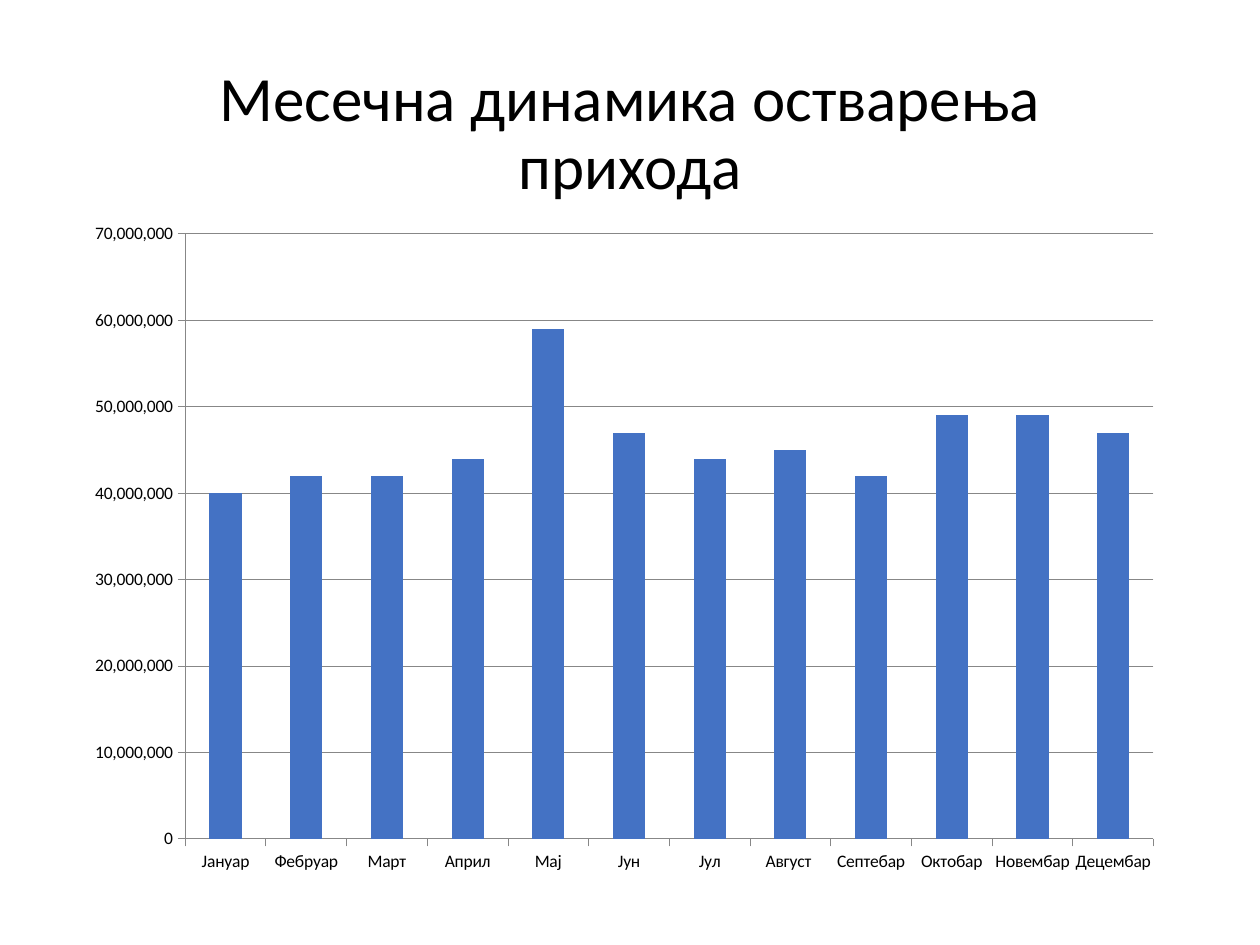
from pptx import Presentation
from pptx.chart.data import CategoryChartData
from pptx.dml.color import RGBColor
from pptx.enum.chart import XL_CHART_TYPE, XL_TICK_MARK
from pptx.enum.text import MSO_ANCHOR, MSO_AUTO_SIZE, PP_ALIGN
from pptx.util import Inches, Pt

COLUMNS = XL_CHART_TYPE.COLUMN_CLUSTERED
TICK_OUTSIDE, TICK_NONE = XL_TICK_MARK.OUTSIDE, XL_TICK_MARK.NONE
BOTTOM, CENTER = MSO_ANCHOR.BOTTOM, PP_ALIGN.CENTER
NO_AUTOFIT = MSO_AUTO_SIZE.NONE
TITLE_ONLY_LAYOUT = 5

FONT = "Calibri"
BLACK, BLUE, GRAY = "000000", "4472C4", "878787"

MONTHLY_REVENUE = {
    "Јануар": 40_000_000,
    "Фебруар": 42_000_000,
    "Март": 42_000_000,
    "Април": 44_000_000,
    "Мај": 59_000_000,
    "Јун": 47_000_000,
    "Јул": 44_000_000,
    "Август ": 45_000_000,
    "Септебар": 42_000_000,
    "Октобар": 49_000_000,
    "Новембар": 49_000_000,
    "Децембар": 47_000_000,
}


def color(hex_value):
    return RGBColor.from_string(hex_value)


def set_attributes(target, values):
    for name, value in values.items():
        setattr(target, name, value)


def set_font(font, size):
    set_attributes(font, {"name": FONT, "size": Pt(size), "bold": False})
    font.color.rgb = color(BLACK)


def set_line(line):
    line.width = Pt(0.5)
    line.color.rgb = color(GRAY)


def add_title(slide, text):
    title = slide.shapes.title
    set_attributes(title, {
        "left": Inches(1.25), "top": Inches(0.4),
        "width": Inches(7.5), "height": Inches(1.26),
    })
    frame = title.text_frame
    frame.text = text
    set_attributes(frame, {
        "word_wrap": True, "auto_size": NO_AUTOFIT, "vertical_anchor": BOTTOM,
    })
    paragraph = frame.paragraphs[0]
    set_attributes(paragraph, {"alignment": CENTER, "line_spacing": 0.9})
    set_font(paragraph.runs[0].font, 36)


def format_axis(axis, number_format):
    set_attributes(axis, {
        "major_tick_mark": TICK_OUTSIDE, "minor_tick_mark": TICK_NONE,
    })
    set_attributes(axis.tick_labels, {
        "number_format": number_format, "number_format_is_linked": False,
    })
    set_line(axis.format.line)


def add_revenue_chart(slide):
    data = CategoryChartData()
    data.categories = MONTHLY_REVENUE.keys()
    data.add_series("Series 1", MONTHLY_REVENUE.values())
    chart = slide.shapes.add_chart(
        COLUMNS, Inches(0.58), Inches(1.67), Inches(8.75), Inches(5.35), data
    ).chart
    set_attributes(chart, {"has_legend": False, "has_title": False})
    set_font(chart.font, 10)

    format_axis(chart.category_axis, "General")
    value_axis = chart.value_axis
    format_axis(value_axis, "#,##0")
    set_attributes(value_axis, {
        "minimum_scale": 0, "maximum_scale": 70_000_000,
        "major_unit": 10_000_000, "has_major_gridlines": True,
    })
    set_line(value_axis.major_gridlines.format.line)

    plot = chart.plots[0]
    set_attributes(plot, {"gap_width": 150, "vary_by_categories": False})
    fill = plot.series[0].format.fill
    fill.solid()
    fill.fore_color.rgb = color(BLUE)


def main():
    presentation = Presentation()
    set_attributes(presentation, {
        "slide_width": Inches(10), "slide_height": Inches(7.5),
    })
    layout = presentation.slide_layouts[TITLE_ONLY_LAYOUT]
    slide = presentation.slides.add_slide(layout)
    add_title(slide, "Месечна динамика остварења прихода")
    add_revenue_chart(slide)
    presentation.save("out.pptx")


if __name__ == "__main__":
    main()
